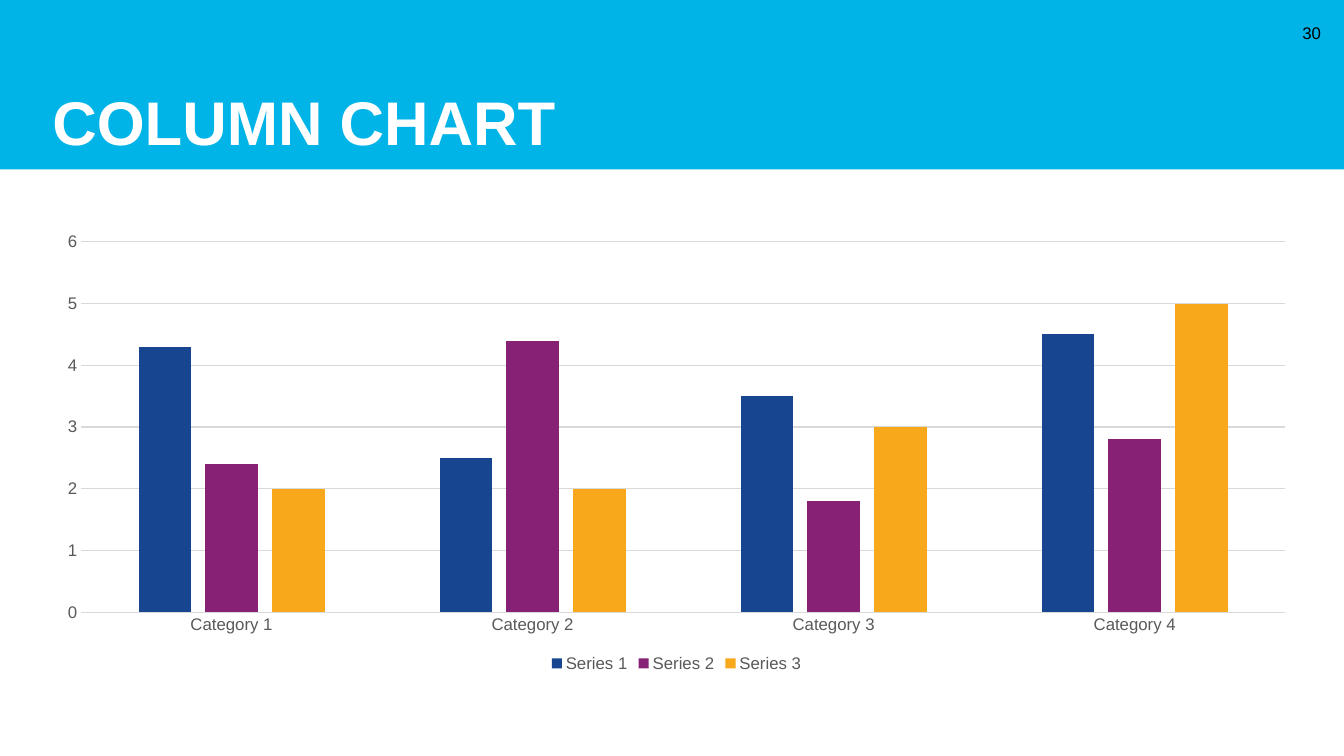
from dataclasses import dataclass

import pptx
import pptx.chart.data
import pptx.dml.color
import pptx.enum.chart
import pptx.enum.text
import pptx.util
from pptx.util import Inches

FONT = "Arial"
LABEL_GRAY = "595959"
GRID_GRAY = "D9D9D9"


@dataclass
class Label:
    text: str
    box: tuple[float, float, float, float]
    size: float
    color: str
    bold: bool
    frame_format: dict
    paragraph_format: dict


@dataclass
class Series:
    name: str
    values: tuple[float, ...]
    color: str


LABELS = [
    Label(
        "COLUMN CHART", (0.42, 0, 12.58, 1.68), 44, "FFFFFF", True,
        {"vertical_anchor": pptx.enum.text.MSO_ANCHOR.BOTTOM,
         "margin_top": 0, "margin_bottom": Inches(0.1)},
        {"line_spacing": 0.9},
    ),
    Label(
        "30", (12.74, 0.13, 0.46, 0.4), 12, "000000", False,
        {"vertical_anchor": pptx.enum.text.MSO_ANCHOR.MIDDLE},
        {"alignment": pptx.enum.text.PP_ALIGN.RIGHT},
    ),
]
CATEGORIES = [f"Category {number}" for number in range(1, 5)]
SERIES = [
    Series("Series 1", (4.3, 2.5, 3.5, 4.5), "17458F"),
    Series("Series 2", (2.4, 4.4, 1.8, 2.8), "872175"),
    Series("Series 3", (2, 2, 3, 5), "F7A81B"),
]


def rgb(color: str) -> pptx.dml.color.RGBColor:
    return pptx.dml.color.RGBColor.from_string(color)


def apply_format(target, values: dict) -> None:
    for name, value in values.items():
        setattr(target, name, value)


def style_font(font, size: float, color: str, bold: bool = False) -> None:
    apply_format(font, {"name": FONT, "size": pptx.util.Pt(size), "bold": bold})
    font.color.rgb = rgb(color)


def fill_solid(fill, color: str) -> None:
    fill.solid()
    fill.fore_color.rgb = rgb(color)


def style_line(line, color: str) -> None:
    line.width = pptx.util.Pt(0.75)
    line.color.rgb = rgb(color)


def add_banner(slide) -> None:
    banner = slide.shapes.add_shape(
        pptx.enum.shapes.MSO_SHAPE.RECTANGLE, 0, 0, Inches(13.33), Inches(1.68)
    )
    banner.shadow.inherit = False
    fill_solid(banner.fill, "01B4E7")
    banner.line.fill.background()


def add_label(slide, label: Label) -> None:
    frame = slide.shapes.add_textbox(*map(Inches, label.box)).text_frame
    apply_format(frame, {"word_wrap": True, **label.frame_format})
    paragraph = frame.paragraphs[0]
    apply_format(paragraph, label.paragraph_format)
    run = paragraph.add_run()
    run.text = label.text
    style_font(run.font, label.size, label.color, label.bold)


def add_column_chart(slide) -> None:
    data = pptx.chart.data.CategoryChartData()
    data.categories = CATEGORIES
    for series in SERIES:
        data.add_series(series.name, series.values)
    chart = slide.shapes.add_chart(
        pptx.enum.chart.XL_CHART_TYPE.COLUMN_CLUSTERED,
        *map(Inches, (0.42, 2.22, 12.58, 4.49)), data,
    ).chart
    style_font(chart.font, 10, "000000")
    apply_format(chart, {"has_title": False, "has_legend": True})
    apply_format(chart.legend, {
        "position": pptx.enum.chart.XL_LEGEND_POSITION.BOTTOM,
        "include_in_layout": False,
    })
    style_font(chart.legend.font, 12, LABEL_GRAY)

    columns = chart.plots[0]
    apply_format(columns, {"gap_width": 219, "overlap": -27, "vary_by_categories": False})
    for drawn, series in zip(columns.series, SERIES):
        fill_solid(drawn.format.fill, series.color)

    no_ticks = pptx.enum.chart.XL_TICK_MARK.NONE
    for axis in (chart.category_axis, chart.value_axis):
        apply_format(axis, {"major_tick_mark": no_ticks, "minor_tick_mark": no_ticks})
        style_font(axis.tick_labels.font, 12, LABEL_GRAY)
    style_line(chart.category_axis.format.line, GRID_GRAY)
    apply_format(chart.value_axis, {
        "minimum_scale": 0, "maximum_scale": 6, "major_unit": 1, "has_major_gridlines": True,
    })
    chart.value_axis.format.line.fill.background()
    style_line(chart.value_axis.major_gridlines.format.line, GRID_GRAY)


def main() -> None:
    deck = pptx.Presentation()
    apply_format(deck, {"slide_width": Inches(13.33), "slide_height": Inches(7.5)})
    slide = deck.slides.add_slide(deck.slide_layouts[6])
    add_banner(slide)
    for label in LABELS:
        add_label(slide, label)
    add_column_chart(slide)
    deck.save("out.pptx")


if __name__ == "__main__":
    main()
